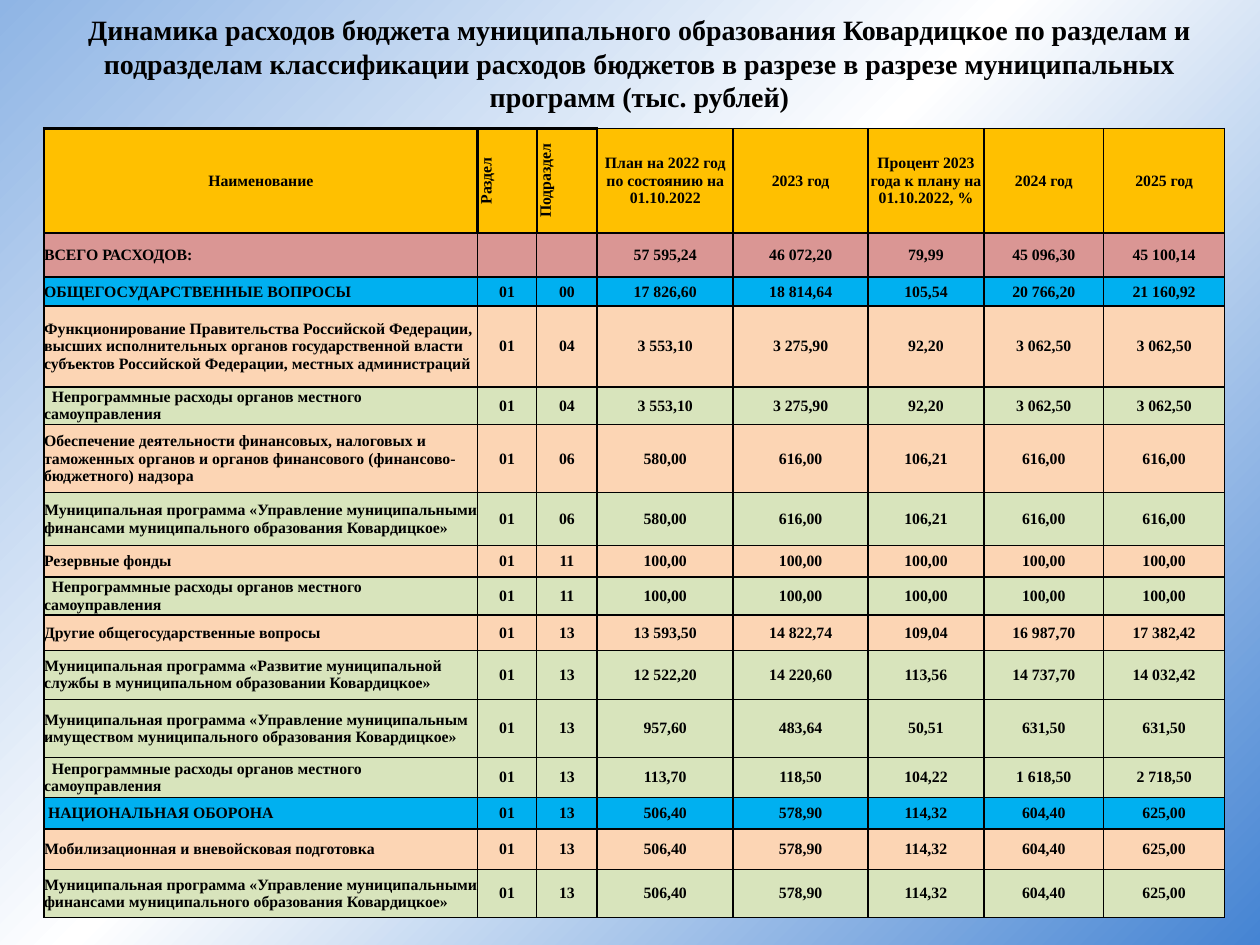
"""Build the slide on municipal budget spending by section and programme."""
from lxml import etree
from pptx import Presentation
from pptx import util as u
from pptx.dml.color import RGBColor
from pptx.enum import text
from pptx.oxml import parse_xml

COLORS = {
    "ink": "000000",
    "header": "FFC000",
    "total": "DA9694",
    "section": "00B0F0",
    "subsection": "FCD5B4",
    "programme": "D8E4BC",
    "sky": "8FB5E5",
    "white": "FFFFFF",
    "deep": "4584D3",
}
FONT = "Times New Roman"
A = "http://schemas.openxmlformats.org/drawingml/2006/main"
P = "http://schemas.openxmlformats.org/presentationml/2006/main"


def style(paragraph, size, align):
    paragraph.alignment = align
    for run in paragraph.runs:
        run.font.name = FONT
        run.font.size = u.Pt(size)
        run.font.bold = True
        run.font.color.rgb = RGBColor.from_string(COLORS["ink"])


def add_borders(cell, widths):
    for side, width in widths.items():
        cell._tc.get_or_add_tcPr().append(parse_xml(
            f'<a:ln{side} xmlns:a="{A}" w="{u.Pt(width)}"><a:solidFill>'
            f'<a:srgbClr val="{COLORS["ink"]}"/></a:solidFill></a:ln{side}>'))


prs = Presentation()
prs.slide_width, prs.slide_height = u.Inches(10), u.Inches(7.5)
slide = prs.slides.add_slide(prs.slide_layouts[6])

gradient = [(0, "sky"), (46, "white"), (100, "deep")]
stops = "".join(f'<a:gs pos="{pos * 1000}"><a:srgbClr val="{COLORS[name]}"/></a:gs>'
                for pos, name in gradient)
background = etree.fromstring(
    f'<p:bg xmlns:p="{P}" xmlns:a="{A}"><p:bgPr><a:gradFill rotWithShape="1">'
    f'<a:gsLst>{stops}</a:gsLst><a:lin ang="2700000" scaled="0"/></a:gradFill>'
    '<a:effectLst/></p:bgPr></p:bg>')
slide.element.cSld.insert(0, background)

title = slide.shapes.add_textbox(u.Inches(0.35), u.Inches(0.05), u.Inches(9.45), u.Inches(0.71))
title.text_frame.word_wrap = True
title.text_frame.text = (
    "Динамика расходов бюджета муниципального образования Ковардицкое по разделам и "
    "подразделам классификации расходов бюджетов в разрезе в разрезе муниципальных "
    "программ (тыс. рублей)")
style(title.text_frame.paragraphs[0], 16, text.PP_ALIGN.CENTER)

non_programme = "  Непрограммные расходы органов местного самоуправления"
finance = ("Муниципальная программа «Управление муниципальными финансами "
           "муниципального образования Ковардицкое»")
budget = [
    ("header", 0.83, "Наименование|Раздел|Подраздел|План на 2022 год по состоянию на 01.10.2022"
     "|2023 год|Процент 2023 года к плану на 01.10.2022, %|2024 год|2025 год"),
    ("total", 0.35, "ВСЕГО РАСХОДОВ:|||57 595,24|46 072,20|79,99|45 096,30|45 100,14"),
    ("section", 0.23, "ОБЩЕГОСУДАРСТВЕННЫЕ ВОПРОСЫ"
     "|01|00|17 826,60|18 814,64|105,54|20 766,20|21 160,92"),
    ("subsection", 0.64, "Функционирование Правительства Российской Федерации, высших "
     "исполнительных органов государственной власти субъектов Российской Федерации, "
     "местных администраций|01|04|3 553,10|3 275,90|92,20|3 062,50|3 062,50"),
    ("programme", 0.28, non_programme + "|01|04|3 553,10|3 275,90|92,20|3 062,50|3 062,50"),
    ("subsection", 0.54, "Обеспечение деятельности финансовых, налоговых и таможенных органов "
     "и органов финансового (финансово-бюджетного) надзора"
     "|01|06|580,00|616,00|106,21|616,00|616,00"),
    ("programme", 0.42, finance + "|01|06|580,00|616,00|106,21|616,00|616,00"),
    ("subsection", 0.25, "Резервные фонды|01|11|100,00|100,00|100,00|100,00|100,00"),
    ("programme", 0.28, non_programme + "|01|11|100,00|100,00|100,00|100,00|100,00"),
    ("subsection", 0.28, "Другие общегосударственные вопросы"
     "|01|13|13 593,50|14 822,74|109,04|16 987,70|17 382,42"),
    ("programme", 0.39, "Муниципальная программа «Развитие муниципальной службы в муниципальном "
     "образовании Ковардицкое»|01|13|12 522,20|14 220,60|113,56|14 737,70|14 032,42"),
    ("programme", 0.46, "Муниципальная программа «Управление муниципальным имуществом "
     "муниципального образования Ковардицкое»|01|13|957,60|483,64|50,51|631,50|631,50"),
    ("programme", 0.32, non_programme + "|01|13|113,70|118,50|104,22|1 618,50|2 718,50"),
    ("section", 0.25, " НАЦИОНАЛЬНАЯ ОБОРОНА|01|13|506,40|578,90|114,32|604,40|625,00"),
    ("subsection", 0.32, "Мобилизационная и вневойсковая подготовка"
     "|01|13|506,40|578,90|114,32|604,40|625,00"),
    ("programme", 0.38, finance + "|01|13|506,40|578,90|114,32|604,40|625,00"),
]
column_widths = [3.44, 0.47, 0.48, 1.08, 1.07, 0.92, 0.95, 0.96]

spending = slide.shapes.add_table(
    len(budget), len(column_widths), u.Inches(0.35), u.Inches(1.02),
    u.Inches(9.37), u.Inches(6.23)).table
spending.horz_banding = False
for column, width in zip(spending.columns, column_widths):
    column.width = u.Inches(width)

for r, (level, height, line) in enumerate(budget):
    spending.rows[r].height = u.Inches(height)
    for c, value in enumerate(line.split("|")):
        cell = spending.cell(r, c)
        cell.margin_left = cell.margin_right = cell.margin_top = cell.margin_bottom = 0
        cell.vertical_anchor = text.MSO_ANCHOR.MIDDLE
        widths = dict.fromkeys("LRTB", 1)
        if level == "header" and c < 3:
            widths.update(L=1.5, T=1.5, R=1 if c == 2 else 1.5)
        add_borders(cell, widths)
        cell.fill.solid()
        cell.fill.fore_color.rgb = RGBColor.from_string(COLORS[level])
        if level == "header" and c in (1, 2):
            cell._tc.tcPr.set("vert", "vert270")
        cell.text_frame.text = value
        left_aligned = c == 0 and level != "header"
        style(cell.text_frame.paragraphs[0], 9,
              text.PP_ALIGN.LEFT if left_aligned else text.PP_ALIGN.CENTER)
        if not value:
            cell.text_frame.paragraphs[0].font.size = u.Pt(9)

prs.save("out.pptx")
